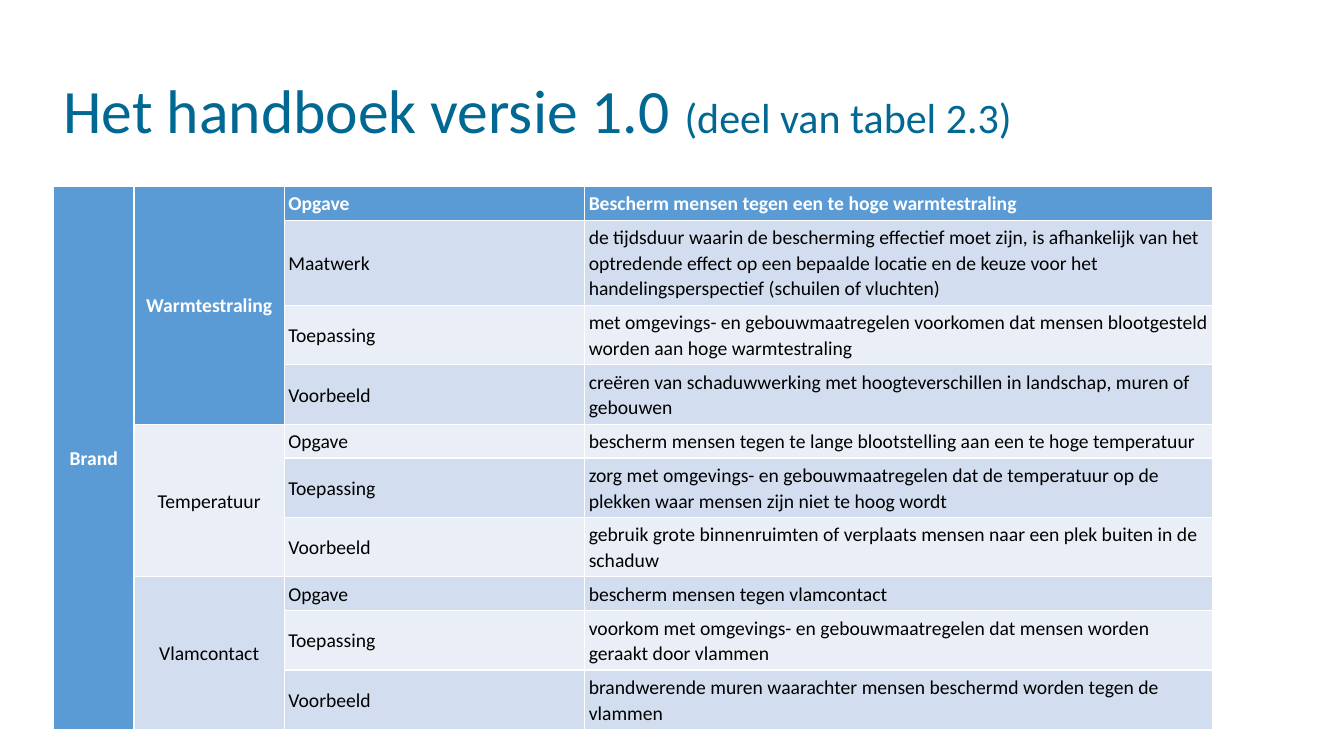
from pptx import Presentation
from pptx import util as u
from pptx.dml.color import RGBColor
from pptx.enum import text

COLORS = {"title": "006892", "head": "5B9BD5", "odd": "D2DEEF", "even": "EAEFF7",
          "light": "FFFFFF", "dark": "000000"}
FONT = "Calibri"
COLUMNS = [0.8, 1.49, 2.98, 6.23]
LINE, INSET = 0.255, 0.04

# Per hazard: kind of row, description, number of text lines
HAZARDS = {
    "Warmtestraling": [
        ("Opgave", "Bescherm mensen tegen een te hoge warmtestraling", 1),
        ("Maatwerk", "de tijdsduur waarin de bescherming effectief moet zijn, is afhankelijk "
         "van het optredende effect op een bepaalde locatie en de keuze voor het "
         "handelingsperspectief (schuilen of vluchten)", 3),
        ("Toepassing", "met omgevings- en gebouwmaatregelen voorkomen dat mensen "
         "blootgesteld worden aan hoge warmtestraling", 2),
        ("Voorbeeld", "creëren van schaduwwerking met hoogteverschillen in landschap, "
         "muren of gebouwen", 2),
    ],
    "Temperatuur": [
        ("Opgave", "bescherm mensen tegen te lange blootstelling aan een te hoge "
         "temperatuur", 1),
        ("Toepassing", "zorg met omgevings- en gebouwmaatregelen dat de temperatuur op de "
         "plekken waar mensen zijn niet te hoog wordt", 2),
        ("Voorbeeld", "gebruik grote binnenruimten of verplaats mensen naar een plek buiten "
         "in de schaduw", 2),
    ],
    "Vlamcontact": [
        ("Opgave", "bescherm mensen tegen vlamcontact", 1),
        ("Toepassing", "voorkom met omgevings- en gebouwmaatregelen dat mensen worden "
         "geraakt door vlammen", 2),
        ("Voorbeeld", "brandwerende muren waarachter mensen beschermd worden tegen de "
         "vlammen", 2),
    ],
}


def add_run(p, words, size, color, bold=False):
    r = p.add_run()
    r.text = words
    r.font.name, r.font.size, r.font.bold = FONT, u.Pt(size), bold
    r.font.color.rgb = RGBColor.from_string(COLORS[color])


def place_title(s, left, top, width, height):
    sp = s.shapes.title
    sp.left, sp.top, sp.width, sp.height = map(u.Inches, (left, top, width, height))
    tf = sp.text_frame
    tf.auto_size = text.MSO_AUTO_SIZE.NONE
    tf.vertical_anchor = text.MSO_ANCHOR.MIDDLE
    p = tf.paragraphs[0]
    p.alignment, p.line_spacing = text.PP_ALIGN.LEFT, 0.9
    add_run(p, "Het handboek versie 1.0 ", 44, "title")
    add_run(p, "(deel van tabel 2.3)", 30, "title")


def fill_cell(cell, words, row, centred=False):
    head = row == 0
    band = "head" if head else "odd" if row % 2 else "even"
    cell.fill.solid()
    cell.fill.fore_color.rgb = RGBColor.from_string(COLORS[band])
    cell.vertical_anchor = text.MSO_ANCHOR.MIDDLE
    cell.margin_left = cell.margin_right = u.Inches(INSET)
    cell.margin_top = cell.margin_bottom = u.Inches(INSET)
    p = cell.text_frame.paragraphs[0]
    p.alignment = text.PP_ALIGN.CENTER if centred else text.PP_ALIGN.LEFT
    p.line_spacing = 1.07
    add_run(p, words, 14, "light" if head else "dark", head)


def place_hazard_table(s, left, top, width):
    rows = [row for group in HAZARDS.values() for row in group]
    heights = [lines * LINE + 2 * INSET for _, _, lines in rows]
    frame = s.shapes.add_table(len(rows), len(COLUMNS), u.Inches(left), u.Inches(top),
                               u.Inches(width), u.Inches(sum(heights)))
    table = frame.table
    for column, share in zip(table.columns, COLUMNS):
        column.width = u.Inches(width * share / sum(COLUMNS))
    for i, (kind, description, _) in enumerate(rows):
        table.rows[i].height = u.Inches(heights[i])
        fill_cell(table.cell(i, 2), kind, i)
        fill_cell(table.cell(i, 3), description, i)

    table.cell(0, 0).merge(table.cell(len(rows) - 1, 0))
    fill_cell(table.cell(0, 0), "Brand", 0, centred=True)
    first = 0
    for hazard, group in HAZARDS.items():
        cell = table.cell(first, 1)
        cell.merge(table.cell(first + len(group) - 1, 1))
        fill_cell(cell, hazard, first, centred=True)
        first += len(group)


def main():
    prs = Presentation()
    prs.slide_width, prs.slide_height = u.Inches(13.33), u.Inches(7.5)
    s = prs.slides.add_slide(prs.slide_layouts[5])
    place_title(s, 0.53, 0.4, 11.5, 1.45)
    place_hazard_table(s, 0.53, 1.85, 11.5)
    prs.save("out.pptx")


if __name__ == "__main__":
    main()
